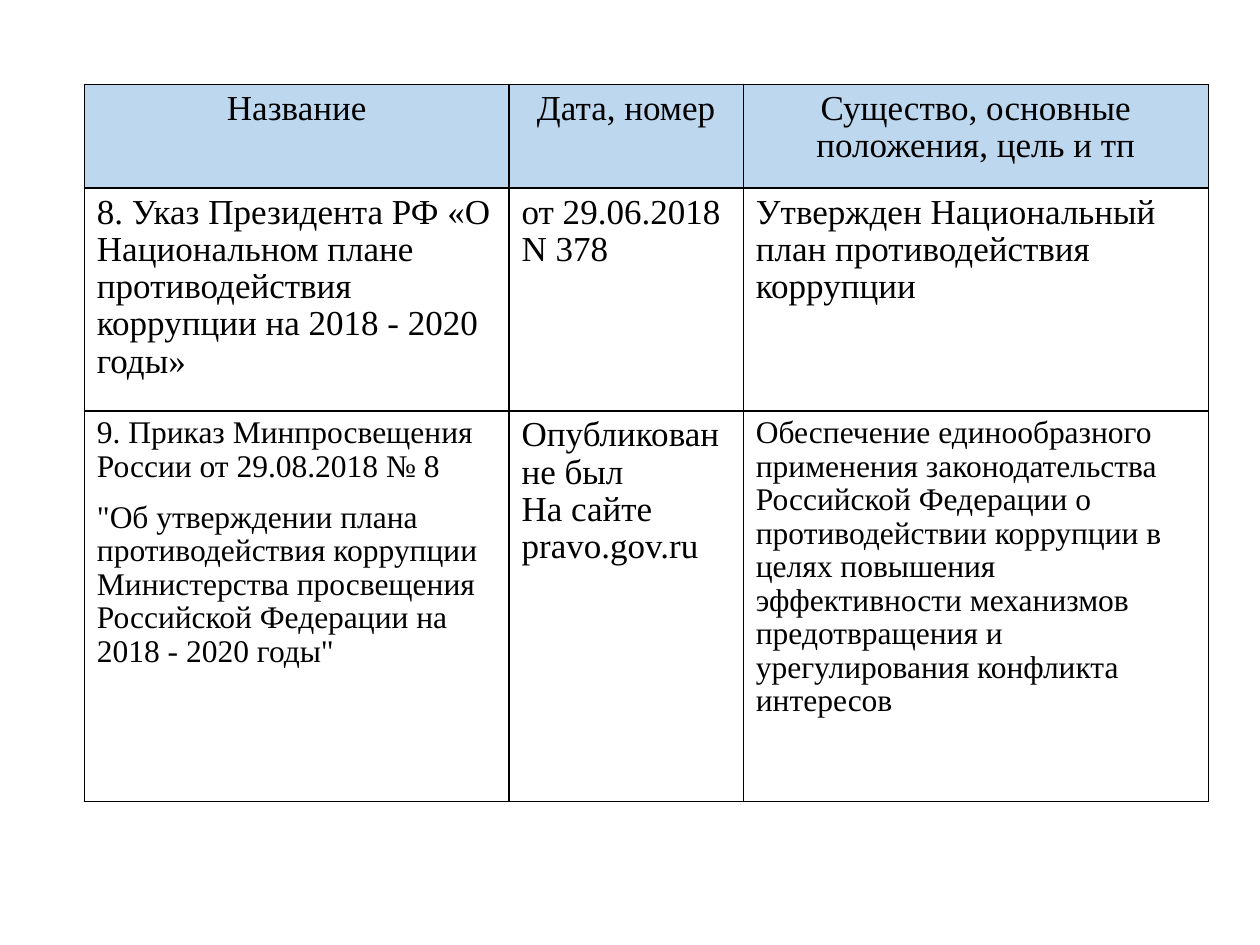
from lxml import etree
from pptx import Presentation
from pptx import util as u
from pptx.dml.color import RGBColor
from pptx.enum import text
from pptx.oxml import ns

Pt = u.Pt


def paint(fill, color):
    fill.solid()
    fill.fore_color.rgb = RGBColor.from_string(color)


def border(cell, color, width):
    props = cell._tc.get_or_add_tcPr()
    for i, side in enumerate(("lnL", "lnR", "lnT", "lnB")):
        line = etree.Element(ns.qn("a:" + side), w=str(Pt(width)))
        solid = etree.SubElement(line, ns.qn("a:solidFill"))
        etree.SubElement(solid, ns.qn("a:srgbClr"), val=color)
        props.insert(i, line)


deck = Presentation()
deck.slide_width, deck.slide_height = Pt(720), Pt(540)
slide = deck.slides.add_slide(deck.slide_layouts[6])

# Each cell: text size, then its paragraphs
rows = [
    [
        (20, ["Название"]),
        (20, ["Дата, номер"]),
        (20, ["Существо, основные положения, цель и тп"]),
    ],
    [
        (20, ["8. Указ Президента РФ «О Национальном плане противодействия "
              "коррупции на 2018 - 2020 годы»"]),
        (20, ["от 29.06.2018 N 378"]),
        (20, ["Утвержден Национальный план противодействия коррупции"]),
    ],
    [
        (18, ["9. Приказ Минпросвещения России от 29.08.2018 № 8",
              "\"Об утверждении плана противодействия коррупции Министерства "
              "просвещения Российской Федерации на 2018 - 2020 годы\""]),
        (20, ["Опубликован не был", "На сайте pravo.gov.ru"]),
        (18, ["Обеспечение единообразного применения законодательства "
              "Российской Федерации о противодействии коррупции в целях "
              "повышения эффективности механизмов предотвращения и "
              "урегулирования конфликта интересов"]),
    ],
]
widths = [242.7, 133.9, 265.7]
heights = [59.2, 127.4, 223.2]

# Table grid
frame = slide.shapes.add_table(len(rows), len(widths), Pt(48.2), Pt(48.2),
                               Pt(sum(widths)), Pt(sum(heights)))
table = frame.table
for col, width in zip(table.columns, widths):
    col.width = Pt(width)
for row, height in zip(table.rows, heights):
    row.height = Pt(height)

# Cells: blue centred header, white body
for r, row in enumerate(rows):
    head = r == 0
    for c, (size, paras) in enumerate(row):
        cell = table.cell(r, c)
        paint(cell.fill, "BDD7EE" if head else "FFFFFF")
        border(cell, "000000", 1)
        cell.text = "\n".join(paras)
        form = {
            "alignment": text.PP_ALIGN.CENTER if head else text.PP_ALIGN.LEFT,
            "line_spacing": 0.96,
            "space_before": Pt(10 if r == 2 and c == 0 else 0),
        }
        face = {"name": "Times New Roman", "size": Pt(size), "bold": False}
        for para in cell.text_frame.paragraphs:
            for key, val in form.items():
                setattr(para, key, val)
            font = para.runs[0].font
            for key, val in face.items():
                setattr(font, key, val)
            paint(font.fill, "000000")

deck.save("out.pptx")
